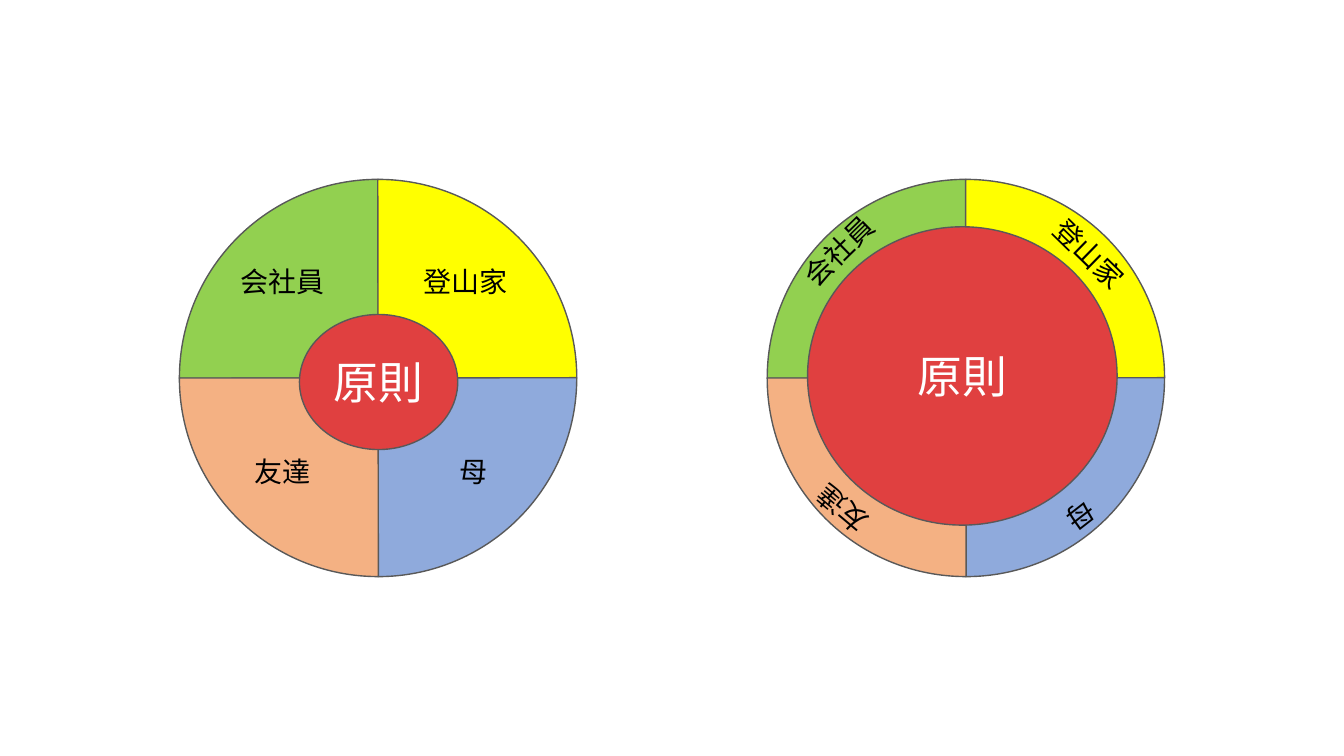
from lxml.etree import SubElement
from pptx import Presentation
from pptx.dml.color import RGBColor as RGB
from pptx.enum.shapes import MSO_SHAPE as SHAPE
from pptx.enum.text import MSO_ANCHOR as ANCHOR, MSO_AUTO_SIZE as AUTO, PP_ALIGN as ALIGN
from pptx.oxml.ns import qn
from pptx.util import Inches, Pt

FONT = "Noto Sans CJK JP"
COLORS = {"green": "92D050", "yellow": "FFFF00", "blue": "8FAADC", "orange": "F4B183",
          "red": "E04040", "line": "595959", "white": "FFFFFF", "black": "000000"}
ROLES = [("会社員", "green"), ("登山家", "yellow"), ("母", "blue"), ("友達", "orange")]

WHEEL, WHEEL_TOP = 3.94, 1.78
LABEL_W, LABEL_H = 1.57, 0.44
# Each wheel: left edge, core box, and left, top, rotation of its role labels
WHEELS = [
    (1.78, (2.97, 3.12, 1.57, 1.34),
     [(2.02, 2.57, 0), (3.83, 2.57, 0), (3.91, 4.46, 0), (2.02, 4.46, 0)]),
    (7.61, (8.01, 2.25, 3.07, 2.96),
     [(7.54, 2.27, 315.6), (10.02, 2.3, 44.3), (9.94, 4.9, 142.1), (7.57, 4.83, 220)]),
]

prs = Presentation()
prs.slide_width, prs.slide_height = Inches(13.33), Inches(7.5)
s = prs.slides.add_slide(prs.slide_layouts[6])


def add_outlined(kind, box, color):
    sp = s.shapes.add_shape(kind, *map(Inches, box))
    sp.shadow.inherit = False
    sp.fill.solid()
    sp.fill.fore_color.rgb = RGB.from_string(COLORS[color])
    sp.line.color.rgb = RGB.from_string(COLORS["line"])
    sp.line.width = Pt(1)
    return sp


def write_centred(tf, text, size, color):
    p = tf.paragraphs[0]
    p.alignment = ALIGN.CENTER
    r = p.add_run()
    r.text = text
    for name, value in {"size": Pt(size), "name": FONT}.items():
        setattr(r.font, name, value)
    r.font.color.rgb = RGB.from_string(COLORS[color])
    SubElement(r.font._element, qn("a:ea"), typeface=FONT)


for left, core_box, labels in WHEELS:
    for i, (role, color) in enumerate(ROLES):
        quarter = add_outlined(SHAPE.PIE, (left, WHEEL_TOP, WHEEL, WHEEL), color)
        quarter.adjustments[0], quarter.adjustments[1] = 107.94, 162
        quarter.rotation = 90 * i

    core = add_outlined(SHAPE.OVAL, core_box, "red")
    core.text_frame.vertical_anchor = ANCHOR.MIDDLE
    write_centred(core.text_frame, "原則", 32, "white")

    for (role, color), (x, y, angle) in zip(ROLES, labels):
        label = s.shapes.add_textbox(*map(Inches, (x, y, LABEL_W, LABEL_H)))
        label.rotation = angle
        label.text_frame.word_wrap = True
        label.text_frame.auto_size = AUTO.SHAPE_TO_FIT_TEXT
        write_centred(label.text_frame, role, 20, "black")

prs.save("out.pptx")
